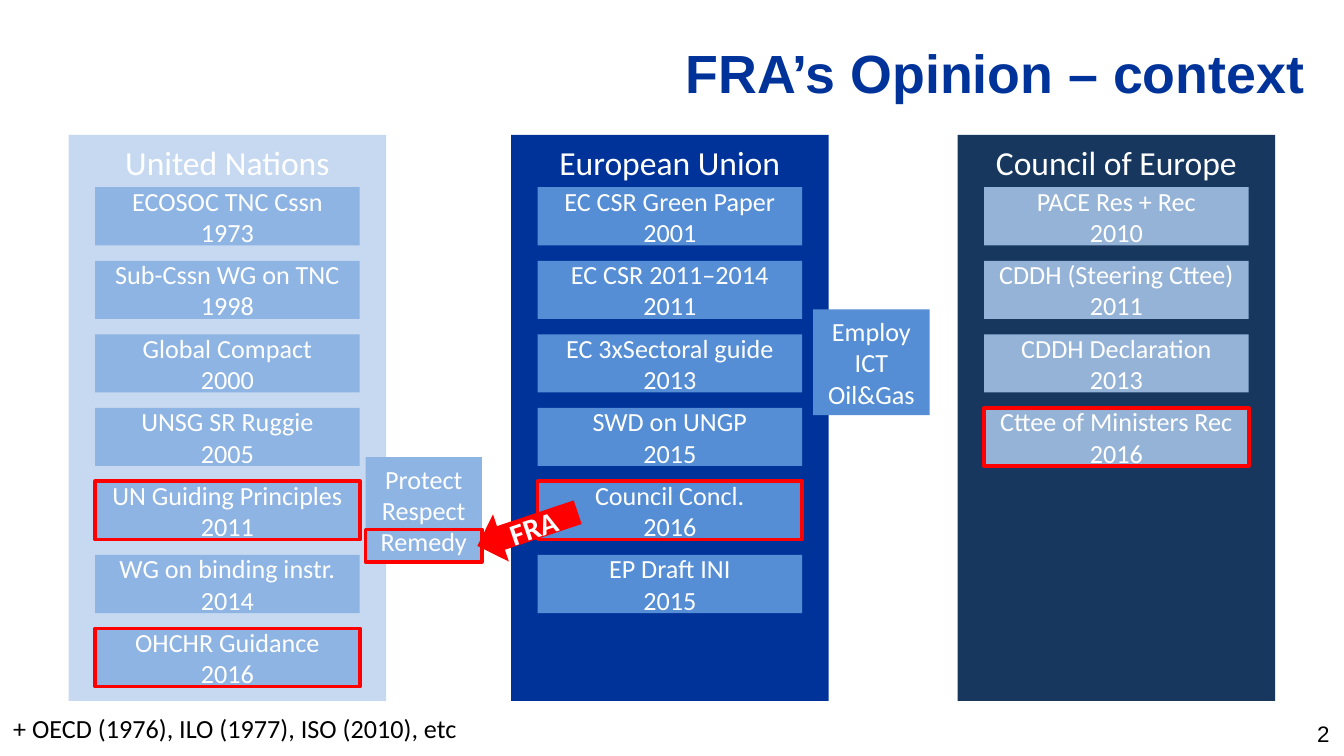
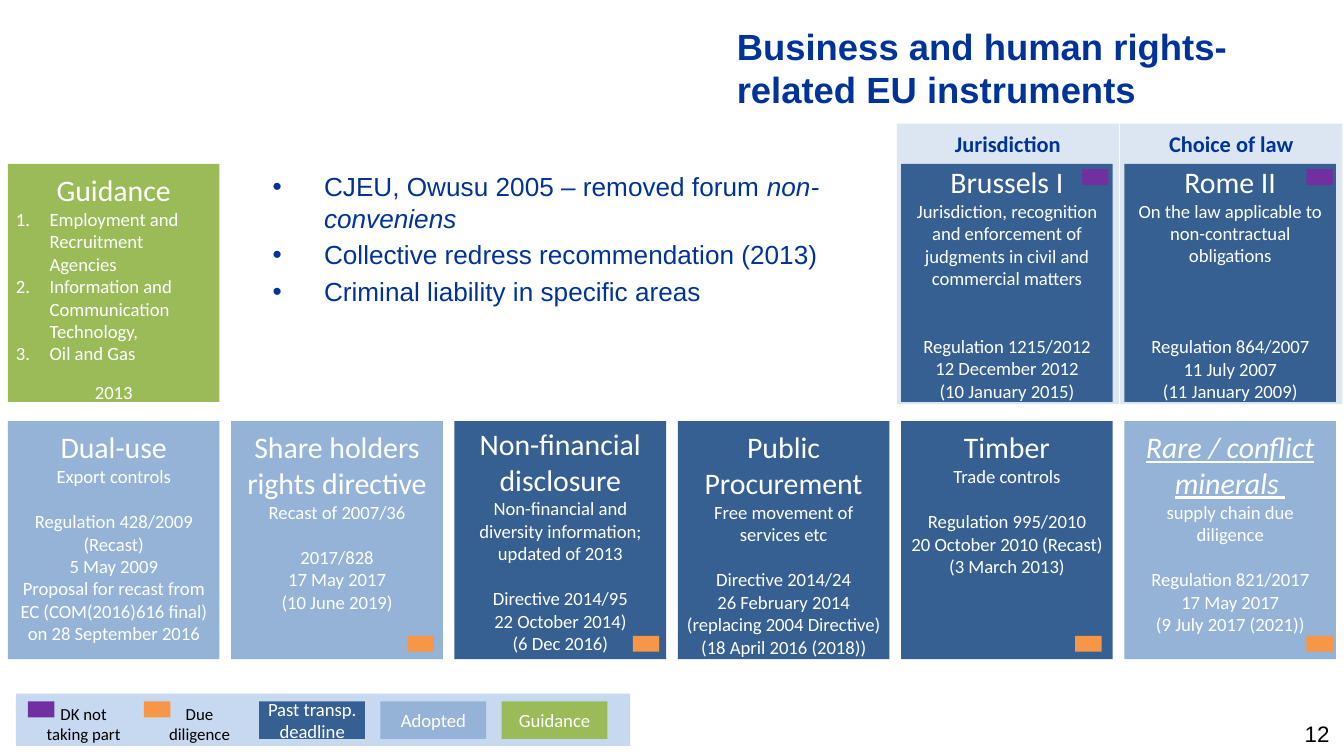
from pptx import Presentation
from pptx.dml.color import RGBColor
from pptx.enum.shapes import MSO_SHAPE
from pptx.enum.text import MSO_ANCHOR, MSO_AUTO_SIZE, PP_ALIGN
from pptx.oxml.ns import qn
from pptx.util import Cm, Pt
from lxml import etree

LEFT, CENTER, RIGHT = PP_ALIGN.LEFT, PP_ALIGN.CENTER, PP_ALIGN.RIGHT
TOP, MIDDLE = MSO_ANCHOR.TOP, MSO_ANCHOR.MIDDLE
RECTANGLE, LEFT_ARROW = MSO_SHAPE.RECTANGLE, MSO_SHAPE.LEFT_ARROW
NO_AUTOFIT = MSO_AUTO_SIZE.NONE
TITLE_AND_CONTENT, TITLE_ONLY = 1, 5

COLORS = {
    "white": "FFFFFF",
    "black": "000000",
    "eu_blue": "003399",
    "pale": "C6D9F1",
    "paler": "DCE6F2",
    "navy": "17375E",
    "un_box": "8EB4E3",
    "eu_box": "558ED5",
    "adopted": "95B3D7",
    "past": "376092",
    "guidance": "9BBB59",
    "red": "FF0000",
    "purple": "7030A0",
    "orange": "F79646",
}
HEADING = {"font": "Arial", "color": "eu_blue"}
TIGHT = 0.15
LINE = 12.2  # height in points of one line of 10 pt text

# Slide 1: heading, left, panel fill, box fill, (name, year, highlighted)
INSTITUTIONS = [
    ("United Nations", 1.3, "pale", "un_box", [
        ("ECOSOC TNC Cssn", "1973", False),
        ("Sub-Cssn WG on TNC", "1998", False),
        ("Global Compact", "2000", False),
        ("UNSG SR Ruggie", "2005", False),
        ("UN Guiding Principles", "2011", True),
        ("WG on binding instr.", "2014", False),
        ("OHCHR Guidance", "2016", True),
    ]),
    ("Council of Europe", 18.1, "navy", "adopted", [
        ("PACE Res + Rec", "2010", False),
        ("CDDH (Steering Cttee)", "2011", False),
        ("CDDH Declaration", "2013", False),
        ("Cttee of Ministers Rec", "2016", True),
    ]),
    ("European Union", 9.66, "eu_blue", "eu_box", [
        ("EC CSR Green Paper", "2001", False),
        ("EC CSR 2011–2014", "2011", False),
        ("EC 3xSectoral guide", "2013", False),
        ("SWD on UNGP", "2015", False),
        ("Council Concl.", "2016", True),
        ("EP Draft INI", "2015", False),
    ]),
]

# Slide 2: column, row, fill, anchor, name, subject, blank lines, details
INSTRUMENTS = [
    (4, 0, "past", MIDDLE, "Brussels I",
     "Jurisdiction, recognition and enforcement of judgments in civil and "
     "commercial matters", 2,
     ["Regulation 1215/2012", "12 December 2012", "(10 January 2015)"]),
    (5, 0, "past", MIDDLE, "Rome II",
     "On the law applicable to non-contractual obligations", 3,
     ["Regulation 864/2007", "11 July 2007", "(11 January 2009)"]),
    (0, 1, "adopted", TOP, "Dual-use", "Export controls", 1,
     ["Regulation 428/2009 (Recast)", "5 May 2009",
      "Proposal for recast from EC (COM(2016)616 final) on 28 September 2016"]),
    (1, 1, "adopted", TOP, "Share holders rights directive",
     "Recast of 2007/36", 1,
     ["2017/828", "17 May 2017", "(10 June 2019)"]),
    (2, 1, "past", MIDDLE, "Non-financial disclosure",
     "Non-financial and diversity information; updated of 2013", 1,
     ["Directive 2014/95", "22 October 2014)", "(6 Dec 2016)"]),
    (3, 1, "past", TOP, "Public Procurement",
     "Free movement of services etc", 1,
     ["Directive 2014/24", "26 February 2014", "(replacing 2004 Directive)",
      "(18 April 2016 (2018))"]),
    (4, 1, "past", TOP, "Timber", "Trade controls", 1,
     ["Regulation 995/2010", "20 October 2010 (Recast)", "(3 March 2013)"]),
    (5, 1, "adopted", TOP, "Rare / conflict minerals ",
     "supply chain due diligence", 1,
     ["Regulation 821/2017", "17 May 2017", "(9 July 2017 (2021))"]),
]


def rgb(name):
    return RGBColor.from_string(COLORS[name])


def add_span(para, text, size=14, color="white", font="Calibri",
             bold=False, italic=False, underline=False):
    span = para.add_run()
    span.text = text
    span.font.size = Pt(size)
    span.font.name = font
    span.font.color.rgb = rgb(color)
    span.font.bold = bold
    span.font.italic = italic
    span.font.underline = underline


def set_bullet(para, indent, kind, **attributes):
    properties = para._p.get_or_add_pPr()
    properties.set("marL", str(Cm(indent)))
    properties.set("indent", str(-Cm(indent)))
    etree.SubElement(properties, qn(kind), attributes)


def write_lines(box, lines, align=CENTER, anchor=TOP, inset=None, **style):
    """Fill a box; a line is a string or a dict of text, gap, align and style."""
    frame = box.text_frame
    frame.word_wrap = True
    frame.auto_size = NO_AUTOFIT
    frame.vertical_anchor = anchor
    if inset is not None:
        frame.margin_left = frame.margin_right = Cm(inset)
        frame.margin_top = frame.margin_bottom = Cm(inset)
    for index, line in enumerate(lines):
        line = dict(line) if isinstance(line, dict) else {"text": line}
        para = frame.add_paragraph() if index else frame.paragraphs[0]
        para.alignment = line.pop("align", align)
        para.space_before = Pt(line.pop("gap", 0))
        add_span(para, **{**style, **line})


def place(shape, left, top, width, height):
    shape.left, shape.top = Cm(left), Cm(top)
    shape.width, shape.height = Cm(width), Cm(height)


def add_box(page, area, fill=None, outline=None, kind=RECTANGLE):
    box = page.shapes.add_shape(kind, *map(Cm, area))
    box.shadow.inherit = False
    if fill:
        box.fill.solid()
        box.fill.fore_color.rgb = rgb(fill)
    else:
        box.fill.background()
    if outline:
        box.line.color.rgb = rgb(outline)
        box.line.width = Pt(2)
    else:
        box.line.fill.background()
    return box


def add_label(page, area, text, **style):
    write_lines(page.shapes.add_textbox(*map(Cm, area)), [text], **style)


def add_marker(page, left, top, color):
    add_box(page, (left, top, 0.5, 0.3), color)


def add_page(deck, layout, title, area, size, number):
    page = deck.slides.add_slide(deck.slide_layouts[layout])
    place(page.shapes.title, *area)
    write_lines(page.shapes.title, [title], align=LEFT, size=size, bold=True,
                **HEADING)
    page.shapes.title.text_frame.margin_top = Cm(0.22)
    add_label(page, (20.5, 13.44, 4.88, 0.84), number, align=RIGHT,
              anchor=MIDDLE, size=12, font="Arial", color="black")
    return page


def add_institution(page, heading, left, panel_fill, box_fill, documents):
    panel = add_box(page, (left, 2.55, 6, 10.7), panel_fill)
    write_lines(panel, [heading], size=18)
    for row, (name, year, highlighted) in enumerate(documents):
        box = add_box(page, (left + 0.5, 3.54 + 1.39 * row, 5, 1.1), box_fill,
                      "red" if highlighted else None)
        write_lines(box, [name, year], anchor=MIDDLE)


def build_context(deck):
    page = add_page(deck, TITLE_ONLY, "FRA’s Opinion – context",
                    (12.7, 0.53, 12.29, 1.35), 28.8, "2")
    for institution in INSTITUTIONS:
        add_institution(page, *institution)
    add_label(page, (0, 13.34, 25.4, 0.86),
              "+ OECD (1976), ILO (1977), ISO (2010), etc",
              align=LEFT, color="black")
    for left, top, fill, words in (
        (6.91, 8.64, "un_box", ["Protect", "Respect", "Remedy"]),
        (15.37, 5.85, "eu_box", ["Employ", "ICT", "Oil&Gas"]),
    ):
        write_lines(add_box(page, (left, top, 2.2, 2), fill), words,
                    anchor=MIDDLE)
    arrow = add_box(page, (8.97, 9.53, 2, 0.94), "red", kind=LEFT_ARROW)
    arrow.rotation = 341.4
    write_lines(arrow, ["FRA"], anchor=MIDDLE, size=16, bold=True)
    add_box(page, (6.91, 10.01, 2.2, 0.61), outline="red")


def add_card(page, column, row, fill):
    return add_box(page, (0.15 + 4.22 * column, 3.1 + 4.86 * row, 4, 4.5), fill)


def add_instrument(page, column, row, fill, anchor, name, subject, blanks,
                   details):
    pending = name.startswith("Rare")
    lines = [
        {"text": name, "size": 16, "italic": pending, "underline": pending},
        subject,
        {"text": details[0], "gap": LINE * blanks},
        *details[1:],
    ]
    write_lines(add_card(page, column, row, fill), lines, anchor=anchor,
                inset=TIGHT, size=10)


def add_guidance(page):
    card = add_card(page, 0, 0, "guidance")
    sectors = ["Employment and Recruitment Agencies",
               "Information and Communication Technology,", "Oil and Gas"]
    lines = [{"text": "Guidance", "size": 16},
             *({"text": sector, "align": LEFT} for sector in sectors),
             {"text": "2013", "gap": 8.5}]
    write_lines(card, lines, inset=TIGHT, size=10)
    for para in card.text_frame.paragraphs[1:-1]:
        set_bullet(para, 0.64, "a:buAutoNum", type="arabicPeriod")


def add_case_list(page):
    body = page.placeholders[1]
    place(body, 4.9, 3.1, 11.6, 4.5)
    write_lines(body, [
        "CJEU, Owusu 2005 – removed forum ",
        {"text": "Collective redress recommendation (2013)", "gap": 2.8},
        {"text": "Criminal liability in specific areas", "gap": 2.8},
    ], align=LEFT, **HEADING)
    paragraphs = body.text_frame.paragraphs
    add_span(paragraphs[0], "non-conveniens", italic=True, **HEADING)
    for para in paragraphs:
        set_bullet(para, 0.97, "a:buChar", char="•")


def add_legend(page):
    add_box(page, (0.3, 13.11, 11.61, 0.99), "pale")
    for left, color, text in ((0.53, "purple", "DK not taking part"),
                              (2.72, "orange", "Due diligence")):
        add_label(page, (left + 0.05, 13.18, 2, 1), text, anchor=MIDDLE,
                  inset=TIGHT, size=9, color="black")
        add_marker(page, left, 13.26, color)
    keys = (("past", "Past transp. deadline"), ("adopted", "Adopted"),
            ("guidance", "Guidance"))
    for index, (fill, text) in enumerate(keys):
        key = add_box(page, (4.9 + 2.29 * index, 13.26, 2, 0.71), fill)
        write_lines(key, [text], anchor=MIDDLE, inset=TIGHT, size=10)


def build_instruments(deck):
    page = add_page(deck, TITLE_AND_CONTENT,
                    "Business and human rights-related EU instruments",
                    (13.67, 0.23, 11.63, 2.69), 19.5, "12")
    for left, heading in ((16.95, "Jurisdiction"), (21.17, "Choice of law")):
        panel = add_box(page, (left, 2.34, 4.2, 5.3), "paler")
        write_lines(panel, [heading], size=12, color="eu_blue", bold=True)
    for instrument in INSTRUMENTS:
        add_instrument(page, *instrument)
    add_guidance(page)
    add_case_list(page)
    add_legend(page)
    for left in (20.45, 24.69):
        add_marker(page, left, 3.2, "purple")
    for left in (7.7, 11.96, 20.32, 24.69):
        add_marker(page, left, 12.02, "orange")


def main():
    deck = Presentation()
    deck.slide_width, deck.slide_height = Cm(25.4), Cm(14.29)
    build_context(deck)
    build_instruments(deck)
    deck.save("out.pptx")


if __name__ == "__main__":
    main()
